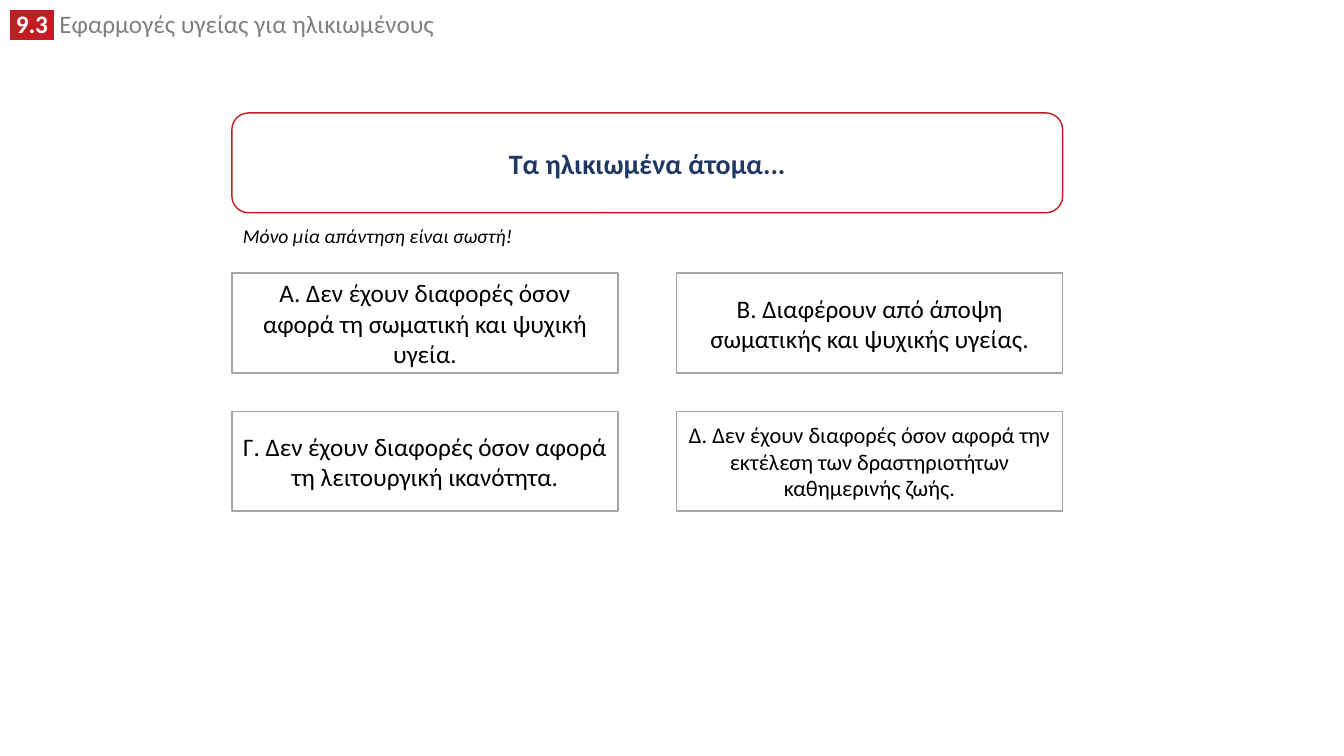
import pptx
import pptx.dml.color
import pptx.enum.shapes
import pptx.enum.text
import pptx.oxml
import pptx.oxml.ns
import pptx.util
from lxml import etree

RGBColor = pptx.dml.color.RGBColor
SHAPE = pptx.enum.shapes.MSO_SHAPE
ANCHOR = pptx.enum.text.MSO_ANCHOR
ALIGN = pptx.enum.text.PP_ALIGN
AUTO_SIZE = pptx.enum.text.MSO_AUTO_SIZE

WHITE = RGBColor(0xFF, 0xFF, 0xFF)
BLACK = RGBColor(0, 0, 0)
RED = RGBColor(0xC0, 0x1E, 0x24)
NAVY = RGBColor(0x20, 0x38, 0x64)
GRAY = RGBColor(0x80, 0x80, 0x80)
SILVER = RGBColor(0xA5, 0xA5, 0xA5)


class QuizSlide:
    """Style and current slide; positions are columns and rows of GRID inches."""
    GRID = 0.1
    FONT = "Calibri"

    def __init__(self, prs):
        self.slide = prs.slides.add_slide(prs.slide_layouts[5])

    def box(self, *cells):
        return [pptx.util.Inches(c * self.GRID) for c in cells]

    def style(self, font, size, color, bold=False, italic=False):
        font.name, font.size = self.FONT, pptx.util.Pt(size)
        font.bold, font.italic = bold, italic
        font.color.rgb = color

    def title(self, cells, number, text):
        sp = self.slide.shapes.title
        sp.left, sp.top, sp.width, sp.height = self.box(*cells)
        tf = sp.text_frame
        tf.word_wrap = True
        tf.auto_size = AUTO_SIZE.SHAPE_TO_FIT_TEXT
        tf.vertical_anchor = ANCHOR.TOP
        p = tf.paragraphs[0]
        p.alignment, p.line_spacing = ALIGN.LEFT, 0.8
        for part, color, bold in ((number, WHITE, True), (text, GRAY, False)):
            r = p.add_run()
            r.text = f" {part} " if bold else f" {part}"
            self.style(r.font, 18, color, bold)
            if bold:
                self.highlight(r, RED)

    def highlight(self, r, color):
        qn = pptx.oxml.ns.qn
        mark = etree.Element(qn("a:highlight"))
        etree.SubElement(mark, qn("a:srgbClr"), val=str(color))
        r.font._element.find(qn("a:solidFill")).addnext(mark)

    def card(self, kind, cells, text, line, size, color=BLACK, bold=False):
        sp = self.slide.shapes.add_shape(kind, *self.box(*cells))
        sp.shadow.inherit = False
        sp.fill.solid()
        sp.fill.fore_color.rgb = WHITE
        sp.line.color.rgb = line
        sp.line.width = pptx.util.Pt(1)
        tf = sp.text_frame
        tf.word_wrap, tf.vertical_anchor = True, ANCHOR.MIDDLE
        p = tf.paragraphs[0]
        p.text, p.alignment = text, ALIGN.CENTER
        self.style(p.font, size, color, bold)

    def note(self, cells, text):
        tf = self.slide.shapes.add_textbox(*self.box(*cells)).text_frame
        tf.word_wrap = False
        tf.auto_size = AUTO_SIZE.SHAPE_TO_FIT_TEXT
        p = tf.paragraphs[0]
        p.text = text
        self.style(p.font, 14, BLACK, italic=True)


def main():
    prs = pptx.Presentation()
    prs.slide_width = pptx.util.Inches(13.33)
    prs.slide_height = pptx.util.Inches(7.5)
    s = QuizSlide(prs)

    # Section heading
    s.title((0, 0.9, 95.2, 3.5), "9.3", "Εφαρμογές υγείας για ηλικιωμένους")

    # Question and hint
    s.card(SHAPE.ROUNDED_RECTANGLE, (23, 11.2, 82.4, 9.9),
           "Τα ηλικιωμένα άτομα...", RED, 20, NAVY, True)
    s.note((23.1, 21.7, 28.9, 3.4), "Μόνο μία απάντηση είναι σωστή!")

    # Answers, two per row
    answers = (
        ("A. Δεν έχουν διαφορές όσον αφορά τη σωματική και ψυχική υγεία.", 18),
        ("B. Διαφέρουν από άποψη σωματικής και ψυχικής υγείας.", 18),
        ("Γ. Δεν έχουν διαφορές όσον αφορά τη λειτουργική ικανότητα.", 18),
        ("Δ. Δεν έχουν διαφορές όσον αφορά την εκτέλεση των "
         "δραστηριοτήτων καθημερινής ζωής.", 16),
    )
    for i, (text, size) in enumerate(answers):
        row, col = divmod(i, 2)
        s.card(SHAPE.RECTANGLE, (23 + 44.1 * col, 27.1 + 13.7 * row, 38.3, 9.9),
               text, SILVER, size)

    prs.save("out.pptx")


if __name__ == "__main__":
    main()
